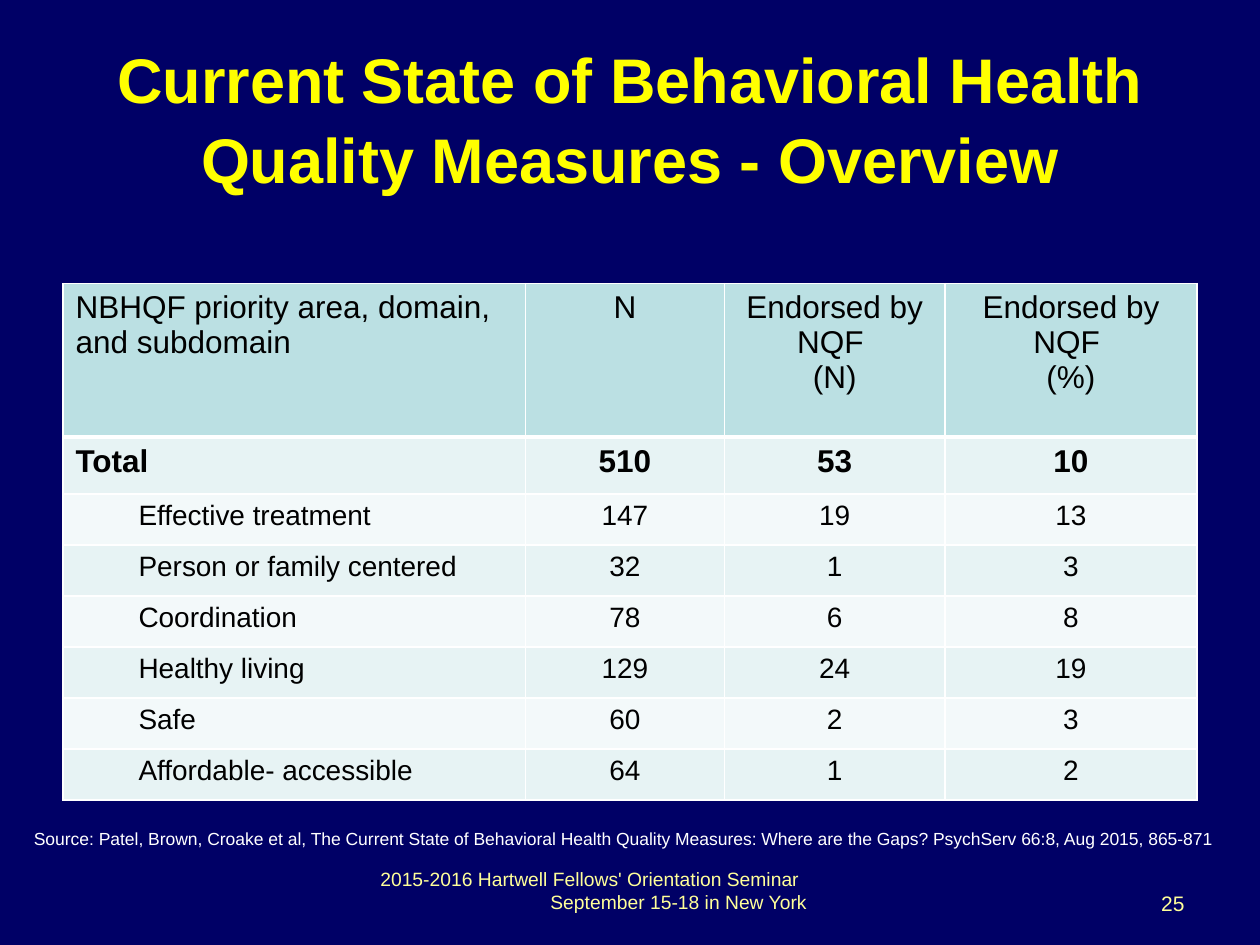
from lxml import etree
from pptx import Presentation
from pptx import util as u
from pptx.dml import color
from pptx.enum import text
from pptx.oxml import ns

FONT = "Arial"
LEFT, CENTER, RIGHT = text.PP_ALIGN.LEFT, text.PP_ALIGN.CENTER, text.PP_ALIGN.RIGHT
COLUMN_WIDTHS = [3.67, 1.58, 1.75, 2]
ROW_HEIGHTS = [1.22, 0.45] + [2.43 / 6] * 6
HEADINGS = [
    ["NBHQF priority area, domain, and subdomain"],
    ["N"],
    ["Endorsed by NQF ", "(N)"],
    ["Endorsed by NQF ", "(%)"],
]
MEASURES = [
    ("Total", 510, 53, 10),
    ("Effective treatment", 147, 19, 13),
    ("Person or family centered", 32, 1, 3),
    ("Coordination", 78, 6, 8),
    ("Healthy living", 129, 24, 19),
    ("Safe", 60, 2, 3),
    ("Affordable- accessible", 64, 1, 2),
]


def paint(target, hex_color):
    target.solid()
    target.fore_color.rgb = color.RGBColor.from_string(hex_color)


def write(frame, lines, size, hex_color, align=LEFT, bold=False):
    for index, line in enumerate(lines):
        para = frame.add_paragraph() if index else frame.paragraphs[0]
        para.alignment = align
        span = para.add_run()
        span.text = line
        span.font.name = FONT
        span.font.size = u.Pt(size)
        span.font.bold = bold
        paint(span.font.fill, hex_color)


def indent(para, inches):
    para._p.get_or_add_pPr().set("marL", str(u.Inches(inches)))


def add_text(page, place, lines, size, hex_color, **style):
    box = page.shapes.add_textbox(*map(u.Inches, place))
    box.text_frame.word_wrap = True
    write(box.text_frame, lines, size, hex_color, **style)
    return box.text_frame


def add_borders(cell, widths):
    properties = cell._tc.get_or_add_tcPr()
    for side, points in widths.items():
        line = etree.SubElement(properties, ns.qn(f"a:ln{side}"), w=str(u.Pt(points)))
        fill = etree.SubElement(line, ns.qn("a:solidFill"))
        etree.SubElement(fill, ns.qn("a:srgbClr"), val="FFFFFF")


def fill_cell(table, row, column, lines):
    cell = table.cell(row, column)
    header, total = row == 0, row == 1
    write(cell.text_frame, lines, 18 if header or total else 16, "000000",
          align=CENTER if column else LEFT, bold=total)
    if column == 0 and row > 1:
        indent(cell.text_frame.paragraphs[0], 0.5)
    add_borders(cell, {"L": 1, "R": 1, "T": 3 if total else 1, "B": 3 if header else 1})
    paint(cell.fill, "BBE0E3" if header else "E7F3F4" if row % 2 else "F3F9FA")


def add_measures(page):
    rows = [HEADINGS] + [[[str(value)] for value in record] for record in MEASURES]
    place = (0.5, 2.25, sum(COLUMN_WIDTHS), sum(ROW_HEIGHTS))
    table = page.shapes.add_table(
        len(rows), len(COLUMN_WIDTHS), *map(u.Inches, place)).table
    for column, width in zip(table.columns, COLUMN_WIDTHS):
        column.width = u.Inches(width)
    for row, height in zip(table.rows, ROW_HEIGHTS):
        row.height = u.Inches(height)
    for row, cells in enumerate(rows):
        for column, lines in enumerate(cells):
            fill_cell(table, row, column, lines)


def main():
    deck = Presentation()
    deck.slide_width, deck.slide_height = u.Inches(10), u.Inches(7.5)
    page = deck.slides.add_slide(deck.slide_layouts[6])
    paint(page.background.fill, "000066")

    title = add_text(page, (0.5, 0.3, 9, 1.25),
                     ["Current State of Behavioral Health Quality Measures - Overview"],
                     36, "FFFF00", align=CENTER, bold=True)
    title.vertical_anchor = text.MSO_ANCHOR.MIDDLE
    title.paragraphs[0].line_spacing = 1.05

    add_measures(page)

    number = add_text(page, (7.17, 6.83, 2.33, 0.52), ["25"], 12, "FFFF99", align=RIGHT)
    number.margin_top = u.Inches(0.24)
    add_text(page, (0.17, 6.52, 9.75, 0.27),
             ["Source: Patel, Brown, Croake et al, The Current State of Behavioral Health "
              "Quality Measures: Where are the Gaps? PsychServ 66:8, Aug 2015, 865-871"],
             10, "FFFFFF")
    footer = add_text(page, (2.92, 6.83, 4.25, 0.52),
                      ["2015-2016 Hartwell Fellows' Orientation Seminar",
                       "September 15-18 in New York"], 11, "FFFF99")
    indent(footer.paragraphs[1], 1.35)
    deck.save("out.pptx")


if __name__ == "__main__":
    main()
